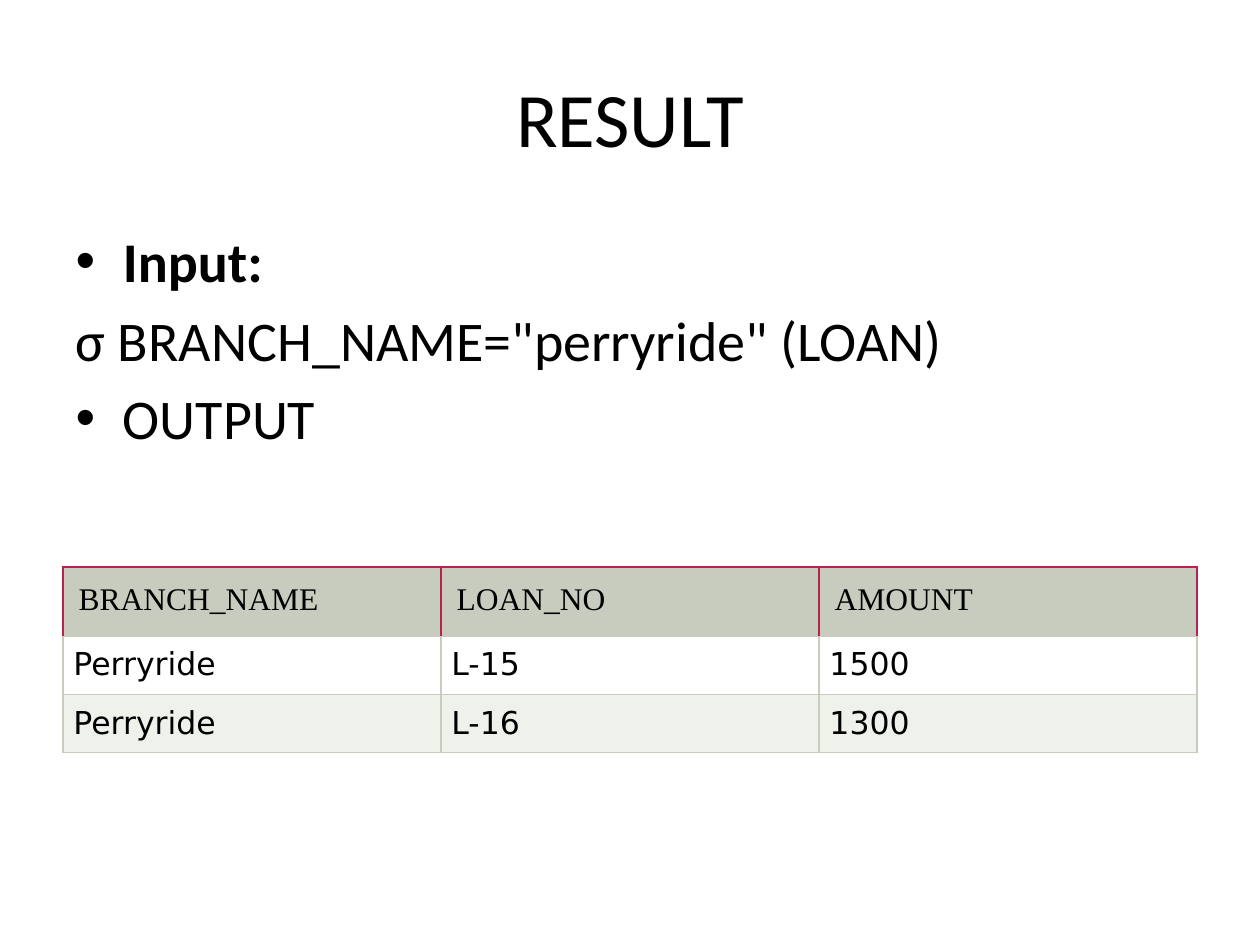
from pptx import Presentation
from pptx.dml.color import RGBColor
from pptx.enum.text import MSO_ANCHOR, PP_ALIGN
from pptx.oxml.ns import qn
from pptx.util import Pt
from lxml.etree import SubElement

BLACK = RGBColor(0x00, 0x00, 0x00)
WHITE = RGBColor(0xFF, 0xFF, 0xFF)
SAGE = RGBColor(0xC7, 0xCC, 0xBE)
PALE = RGBColor(0xEF, 0xF1, 0xEB)
WINE = RGBColor(0xB0, 0x26, 0x4D)

ROWS = [
    ("BRANCH_NAME", "LOAN_NO", "AMOUNT"),
    ("Perryride", "L-15", "1500"),
    ("Perryride", "L-16", "1300"),
]
ITEMS = [
    ("Input:", True, True),
    ('σ BRANCH_NAME="perryride" (LOAN)', False, False),
    ("OUTPUT", False, True),
]


def add_run(para, text, size, face="Calibri", bold=False):
    run = para.add_run()
    run.text = text
    font = run.font
    font.size = Pt(size)
    font.name = face
    font.bold = bold
    font.color.rgb = BLACK


def place(shape, left, top, width, height):
    shape.left, shape.top = Pt(left), Pt(top)
    shape.width, shape.height = Pt(width), Pt(height)


def set_mark(para, dot):
    props = para._p.get_or_add_pPr()
    indent = Pt(27) if dot else 0
    props.set("marL", str(indent))
    props.set("indent", str(-indent))
    if dot:
        SubElement(props, qn("a:buFont"), typeface="Arial")
        SubElement(props, qn("a:buChar"), char="•")
    else:
        SubElement(props, qn("a:buNone"))


def add_title(slide):
    title = slide.shapes.title
    place(title, 36, 21.6, 648, 90)
    frame = title.text_frame
    frame.vertical_anchor = MSO_ANCHOR.MIDDLE
    para = frame.paragraphs[0]
    para.alignment = PP_ALIGN.CENTER
    add_run(para, "RESULT", 44)


def add_list(slide):
    body = slide.placeholders[1]
    place(body, 36, 126, 648, 356.4)
    frame = body.text_frame
    for i, (text, bold, dot) in enumerate(ITEMS):
        para = frame.add_paragraph() if i else frame.paragraphs[0]
        set_mark(para, dot)
        para.space_before = Pt(6.4 if i else 0)
        add_run(para, text, 32, bold=bold)


def set_edge(cell, side, color):
    props = cell._tc.get_or_add_tcPr()
    line = SubElement(props, qn("a:ln" + side), w=str(Pt(0.75)))
    fill = SubElement(line, qn("a:solidFill"))
    SubElement(fill, qn("a:srgbClr"), val=str(color))


def fill_cell(cell, text, head, fill):
    inset = Pt(9 if head else 6)
    cell.margin_left = cell.margin_right = inset
    cell.margin_top = cell.margin_bottom = inset
    for side in "LRTB":
        set_edge(cell, side, WINE if head and side != "B" else SAGE)
    cell.fill.solid()
    cell.fill.fore_color.rgb = fill
    face = "Times New Roman" if head else "DejaVu Sans"
    add_run(cell.text_frame.paragraphs[0], text, 18, face)


def add_grid(slide):
    highs = (39.6, 33.3, 33.3)
    frame = slide.shapes.add_table(
        len(ROWS), len(ROWS[0]), Pt(36), Pt(324), Pt(648), Pt(sum(highs)))
    table = frame.table
    table.first_row = table.horz_banding = False
    for r, (row, high, fill) in enumerate(zip(ROWS, highs, (SAGE, WHITE, PALE))):
        table.rows[r].height = Pt(high)
        for c, text in enumerate(row):
            fill_cell(table.cell(r, c), text, r == 0, fill)


def main():
    deck = Presentation()
    deck.slide_width, deck.slide_height = Pt(720), Pt(540)
    slide = deck.slides.add_slide(deck.slide_layouts[1])
    add_title(slide)
    add_list(slide)
    add_grid(slide)
    deck.save("out.pptx")


if __name__ == "__main__":
    main()
